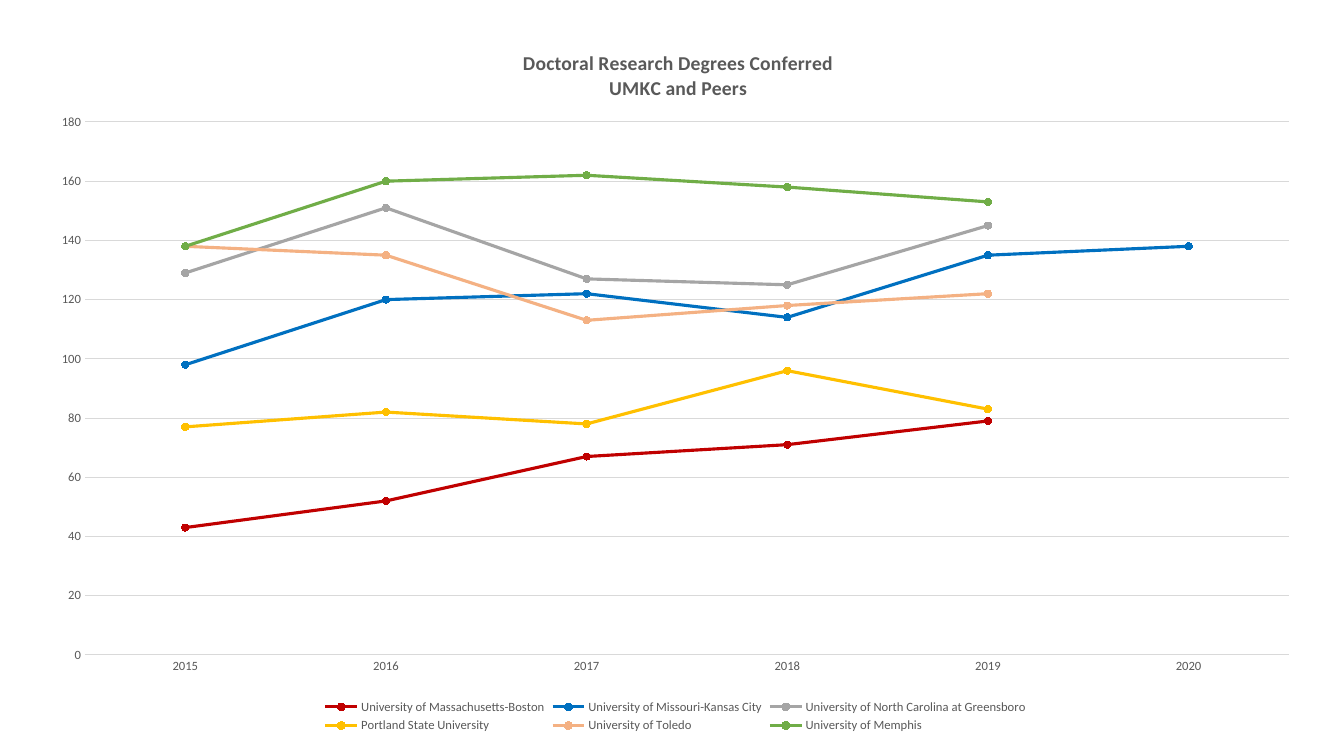
from lxml import etree
from pptx import Presentation
from pptx import util as u
from pptx.chart.data import CategoryChartData
from pptx.dml.color import RGBColor
from pptx.enum import chart as kinds
from pptx.oxml.ns import qn

PX = 9071  # EMU in one px, 100.8 px to the inch
SLIDE = (1344, 756)
FRAME = (36, 22, 1279, 715)
PLOT = (85, 122, 1204, 533)
TITLE = (520, 47)

FONT = "Calibri"
GREY = RGBColor(0x59, 0x59, 0x59)
RULE = RGBColor(0xD9, 0xD9, 0xD9)
RED = RGBColor(0xC0, 0x00, 0x00)
BLUE = RGBColor(0x00, 0x70, 0xC0)
SILVER = RGBColor(0xA5, 0xA5, 0xA5)
GOLD = RGBColor(0xFF, 0xC0, 0x00)
PEACH = RGBColor(0xF4, 0xB1, 0x83)
GREEN = RGBColor(0x70, 0xAD, 0x47)

HEADING = ["Doctoral Research Degrees Conferred", "UMKC and Peers"]
YEARS = ["2015", "2016", "2017", "2018", "2019", "2020"]
PEERS = [
    ("University of Massachusetts-Boston", RED, [43, 52, 67, 71, 79, None]),
    ("University of Missouri-Kansas City", BLUE, [98, 120, 122, 114, 135, 138]),
    ("University of North Carolina at Greensboro", SILVER,
     [129, 151, 127, 125, 145, None]),
    ("Portland State University", GOLD, [77, 82, 78, 96, 83, None]),
    ("University of Toledo", PEACH, [138, 135, 113, 118, 122, None]),
    ("University of Memphis", GREEN, [138, 160, 162, 158, 153, None]),
]


def set_font(font, size, bold=False):
    font.name = FONT
    font.size = u.Pt(size)
    font.bold = bold
    font.color.rgb = GREY


def set_line(line, color, width):
    line.color.rgb = color
    line.width = u.Pt(width)


def place(part, spot, index):
    """Pin a chart part at px (left, top[, width, height]) on the slide."""
    for old in part.findall(qn("c:layout")):
        part.remove(old)
    layout = etree.Element(qn("c:layout"))
    manual = etree.SubElement(layout, qn("c:manualLayout"))

    def add(tag, val):
        etree.SubElement(manual, qn("c:" + tag)).set("val", str(val))

    left, top, wide, high = FRAME
    if len(spot) == 4:
        add("layoutTarget", "inner")
    add("xMode", "edge")
    add("yMode", "edge")
    shares = ((spot[0] - left) / wide, (spot[1] - top) / high,
              *(size / full for size, full in zip(spot[2:], (wide, high))))
    for tag, share in zip("xywh", shares):
        add(tag, round(share, 4))
    part.insert(index, layout)


def add_title(chart):
    title = chart.chart_title
    frame = title.text_frame
    frame.text = "\n".join(HEADING)
    for para in frame.paragraphs:
        set_font(para.font, 14, True)
    title.include_in_layout = False
    place(title._element, TITLE, 1)


def style_axes(chart):
    years, count = chart.category_axis, chart.value_axis
    for axis in (years, count):
        axis.major_tick_mark = kinds.XL_TICK_MARK.NONE
        axis.minor_tick_mark = kinds.XL_TICK_MARK.NONE
        set_font(axis.tick_labels.font, 9)
    set_line(years.format.line, RULE, 0.75)
    count.format.line.fill.background()
    count.minimum_scale, count.maximum_scale = 0, 180
    count.major_unit = 20
    count.tick_labels.number_format = "#,##0"
    count.tick_labels.number_format_is_linked = False
    count.has_major_gridlines = True
    set_line(count.major_gridlines.format.line, RULE, 0.75)


def style_lines(chart):
    plot = chart.plots[0]
    plot.vary_by_categories = False
    for line, (_, color, _) in zip(plot.series, PEERS):
        line.smooth = False
        set_line(line.format.line, color, 2.25)
        mark = line.marker
        mark.style = kinds.XL_MARKER_STYLE.CIRCLE
        mark.size = 5
        mark.format.fill.solid()
        mark.format.fill.fore_color.rgb = color
        set_line(mark.format.line, color, 0.75)


def add_legend(chart):
    chart.has_legend = True
    legend = chart.legend
    legend.position = kinds.XL_LEGEND_POSITION.BOTTOM
    legend.include_in_layout = False
    set_font(legend.font, 9)


def add_graph(slide):
    data = CategoryChartData(number_format="#,##0")
    data.categories = YEARS
    for name, _, counts in PEERS:
        data.add_series(name, counts)
    chart = slide.shapes.add_chart(
        kinds.XL_CHART_TYPE.LINE_MARKERS, *(n * PX for n in FRAME), data).chart
    chart.font.name = FONT
    chart.font.size = u.Pt(10)
    add_title(chart)
    style_axes(chart)
    style_lines(chart)
    add_legend(chart)
    place(chart.plots[0]._element.getparent(), PLOT, 0)


def main():
    deck = Presentation()
    deck.slide_width, deck.slide_height = (n * PX for n in SLIDE)
    add_graph(deck.slides.add_slide(deck.slide_layouts[6]))
    deck.save("out.pptx")


if __name__ == "__main__":
    main()
